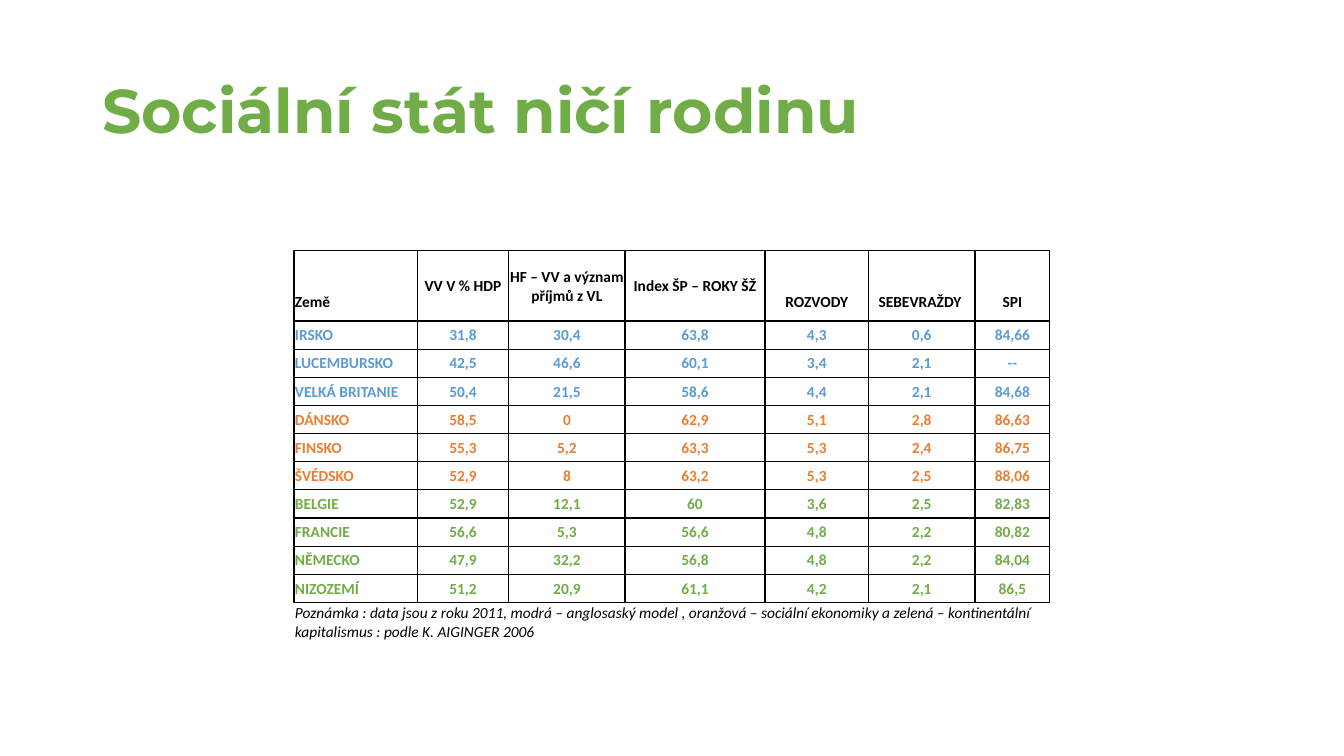
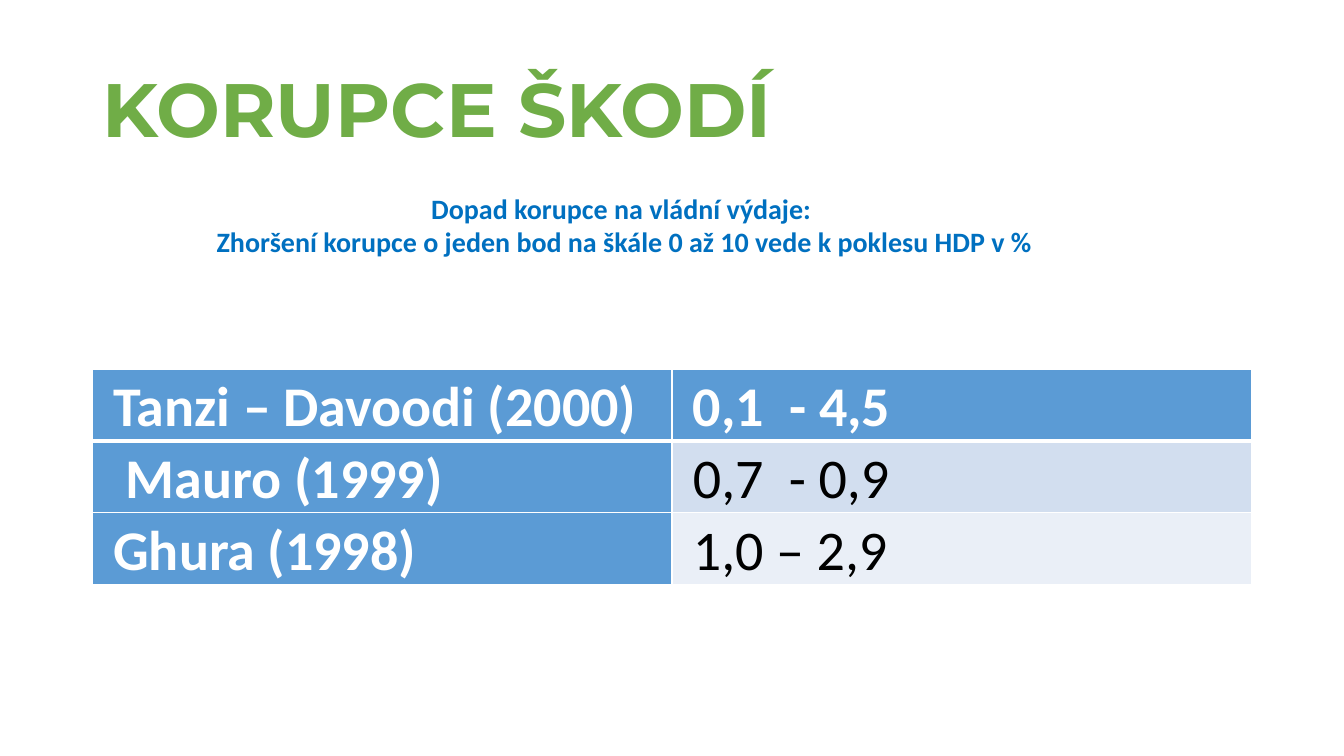
from pptx import Presentation
from pptx.dml.color import RGBColor
from pptx.enum.text import MSO_ANCHOR, PP_ALIGN
from pptx.oxml import parse_xml
from pptx.oxml.ns import nsdecls
from pptx.util import Pt

BLACK, WHITE = "000000", "FFFFFF"
BLUE, ORANGE, GREEN = "5B9BD5", "ED7D31", "70AD47"
NOTE_BLUE, PALE_BLUE, PALER_BLUE = "0070C0", "D2DEEF", "EAEFF7"
MARGIN_SIDES = ("margin_left", "margin_top", "margin_right", "margin_bottom")


def write(paragraph, text, color, size, bold=True, italic=False, face="Calibri",
          align=PP_ALIGN.LEFT, spacing=1.0):
    paragraph.alignment = align
    paragraph.line_spacing = spacing
    font = paragraph.add_run().font
    paragraph.runs[0].text = text
    style = {"name": face, "size": Pt(size), "bold": bold, "italic": italic}
    for attribute, value in style.items():
        setattr(font, attribute, value)
    font.color.rgb = RGBColor.from_string(color)


def format_cell(cell, fill, borders, margins, anchor):
    for side, margin in zip(MARGIN_SIDES, margins):
        setattr(cell, side, Pt(margin))
    cell.vertical_anchor = anchor
    if fill:
        cell.fill.solid()
        cell.fill.fore_color.rgb = RGBColor.from_string(fill)
    else:
        cell.fill.background()
    properties = cell._tc.get_or_add_tcPr()
    for index, side in enumerate("LRTB"):
        color, width = borders.get(side, (None, 0))
        paint = (f'<a:solidFill><a:srgbClr val="{color}"/></a:solidFill>'
                 if color else "<a:noFill/>")
        properties.insert(index, parse_xml(
            f'<a:ln{side} {nsdecls("a")} w="{Pt(width)}">{paint}</a:ln{side}>'))


deck = Presentation()
deck.slide_width, deck.slide_height = Pt(960), Pt(540)

slides = []
for title, size in (("Sociální stát ničí rodinu", 44), ("KORUPCE ŠKODÍ", 54)):
    slide = deck.slides.add_slide(deck.slide_layouts[6])
    heading = slide.shapes.add_textbox(Pt(66), Pt(29), Pt(828), Pt(104)).text_frame
    heading.word_wrap = True
    heading.vertical_anchor = MSO_ANCHOR.MIDDLE
    write(heading.paragraphs[0], title, GREEN, size, face="Montserrat", spacing=0.9)
    slides.append(slide)
family_slide, corruption_slide = slides

country_rows = [
    (BLACK, "", "VV V % HDP", "HF – VV a význam příjmů z VL", "Index ŠP – ROKY ŠŽ", "", "", ""),
    (BLACK, "Země", "", "", "", "ROZVODY", "SEBEVRAŽDY ", "SPI"),
    (BLUE, "IRSKO", "31,8", "30,4", "63,8", "4,3", "0,6", "84,66"),
    (BLUE, "LUCEMBURSKO", "42,5", "46,6", "60,1", "3,4", "2,1", "--"),
    (BLUE, "VELKÁ BRITANIE", "50,4", "21,5", "58,6", "4,4", "2,1", "84,68"),
    (ORANGE, "DÁNSKO", "58,5", "0", "62,9", "5,1", "2,8", "86,63"),
    (ORANGE, "FINSKO", "55,3", "5,2", "63,3", "5,3", "2,4", "86,75"),
    (ORANGE, "ŠVÉDSKO", "52,9", "8", "63,2", "5,3", "2,5", "88,06"),
    (GREEN, "BELGIE", "52,9", "12,1", "60", "3,6", "2,5", "82,83"),
    (GREEN, "FRANCIE", "56,6", "5,3", "56,6", "4,8", "2,2", "80,82"),
    (GREEN, "NĚMECKO", "47,9", "32,2", "56,8", "4,8", "2,2", "84,04"),
    (GREEN, "NIZOZEMÍ", "51,2", "20,9", "61,1", "4,2", "2,1", "86,5"),
]
country_widths = [88, 65.5, 83, 100, 74, 76, 53.5]
note_row = len(country_rows)
country_heights = [20, 28] + [20.1] * (note_row - 2) + [28]
countries = family_slide.shapes.add_table(
    note_row + 1, len(country_widths), Pt(210), Pt(179),
    Pt(sum(country_widths)), Pt(sum(country_heights))).table
for column, width in zip(countries.columns, country_widths):
    column.width = Pt(width)
for row, height in zip(countries.rows, country_heights):
    row.height = Pt(height)

merged_headers = (1, 2, 3)
for column in merged_headers:
    countries.cell(0, column).merge(countries.cell(1, column))
countries.cell(note_row, 0).merge(countries.cell(note_row, len(country_widths) - 1))

tight = (0.7, 0.7, 0.7, 0)
black_line = (BLACK, 1)
for row, (color, *values) in enumerate(country_rows):
    for column, value in enumerate(values):
        cell = countries.cell(row, column)
        sides = "LRTB"
        if column not in merged_headers:
            sides = {0: "LRT", 1: "LRB"}.get(row, sides)
        format_cell(cell, None, dict.fromkeys(sides, black_line), tight, MSO_ANCHOR.MIDDLE)
        if not cell.is_spanned:
            write(cell.text_frame.paragraphs[0], value, color, 11,
                  align=PP_ALIGN.CENTER if column else PP_ALIGN.LEFT)

for column in range(len(country_widths)):
    format_cell(countries.cell(note_row, column), None, {"T": black_line}, tight,
                MSO_ANCHOR.MIDDLE)
write(countries.cell(note_row, 0).text_frame.paragraphs[0],
      "Poznámka : data jsou z roku 2011, modrá – anglosaský model , oranžová – sociální "
      "ekonomiky a zelená – kontinentální kapitalismus : podle K. AIGINGER 2006",
      BLACK, 11, bold=False, italic=True)

studies = [
    ("Tanzi – Davoodi (2000)", "0,1  - 4,5", BLUE),
    (" Mauro (1999)", "0,7  - 0,9", PALE_BLUE),
    ("Ghura (1998)", "1,0 – 2,9", PALER_BLUE),
]
impacts = corruption_slide.shapes.add_table(
    len(studies), 2, Pt(66), Pt(263.5), Pt(828), Pt(154)).table
for row, (study, impact, impact_fill) in enumerate(studies):
    borders = dict.fromkeys("LRTB", (WHITE, 1))
    if row < 2:
        borders["TB"[1 - row]] = (WHITE, 3)
    for column, (value, fill) in enumerate(((study, BLUE), (impact, impact_fill))):
        cell = impacts.cell(row, column)
        format_cell(cell, fill, borders, (15, 0, 15, 0), MSO_ANCHOR.TOP)
        on_blue = fill == BLUE
        write(cell.text_frame.paragraphs[0], value, WHITE if on_blue else BLACK, 40,
              bold=on_blue, spacing=1.07)

summary = corruption_slide.shapes.add_textbox(Pt(71), Pt(133), Pt(750), Pt(80)).text_frame
summary.word_wrap = True
summary_lines = ("Dopad korupce na vládní výdaje: ",
                 "Zhoršení korupce o jeden bod na škále 0 až 10 vede k poklesu HDP v %")
for index, line in enumerate(summary_lines):
    paragraph = summary.add_paragraph() if index else summary.paragraphs[0]
    write(paragraph, line, NOTE_BLUE, 20, align=PP_ALIGN.CENTER)

deck.save("out.pptx")
